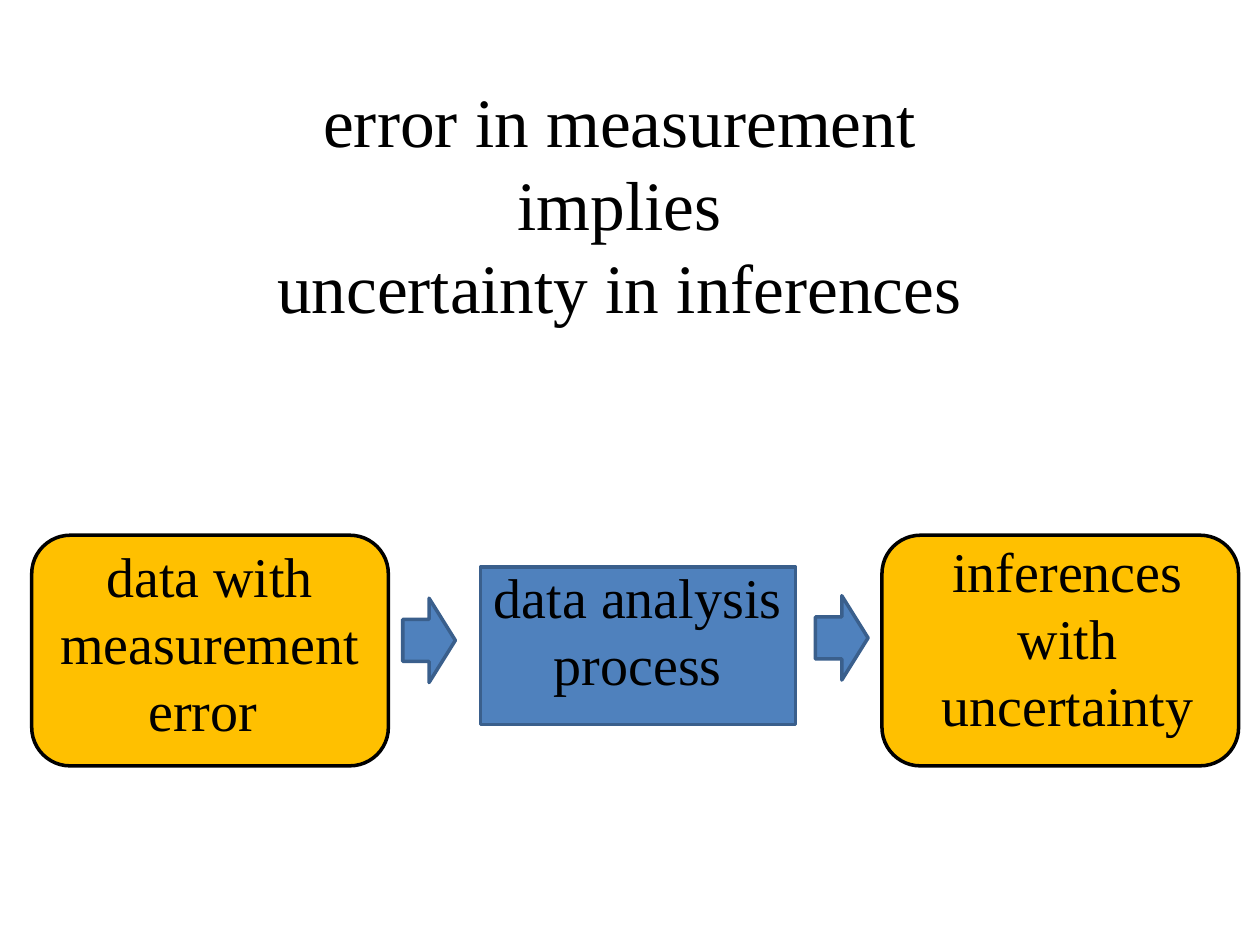
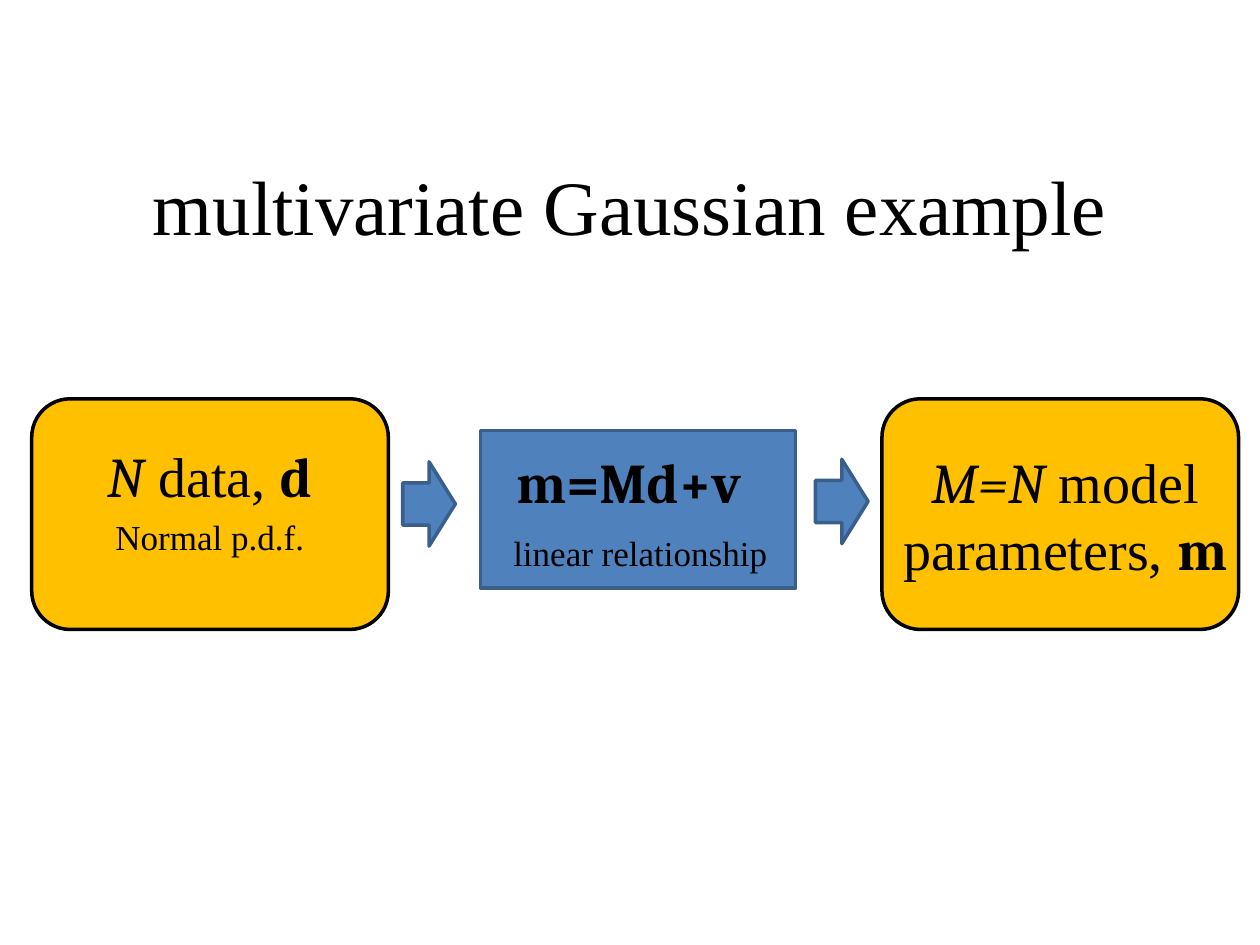
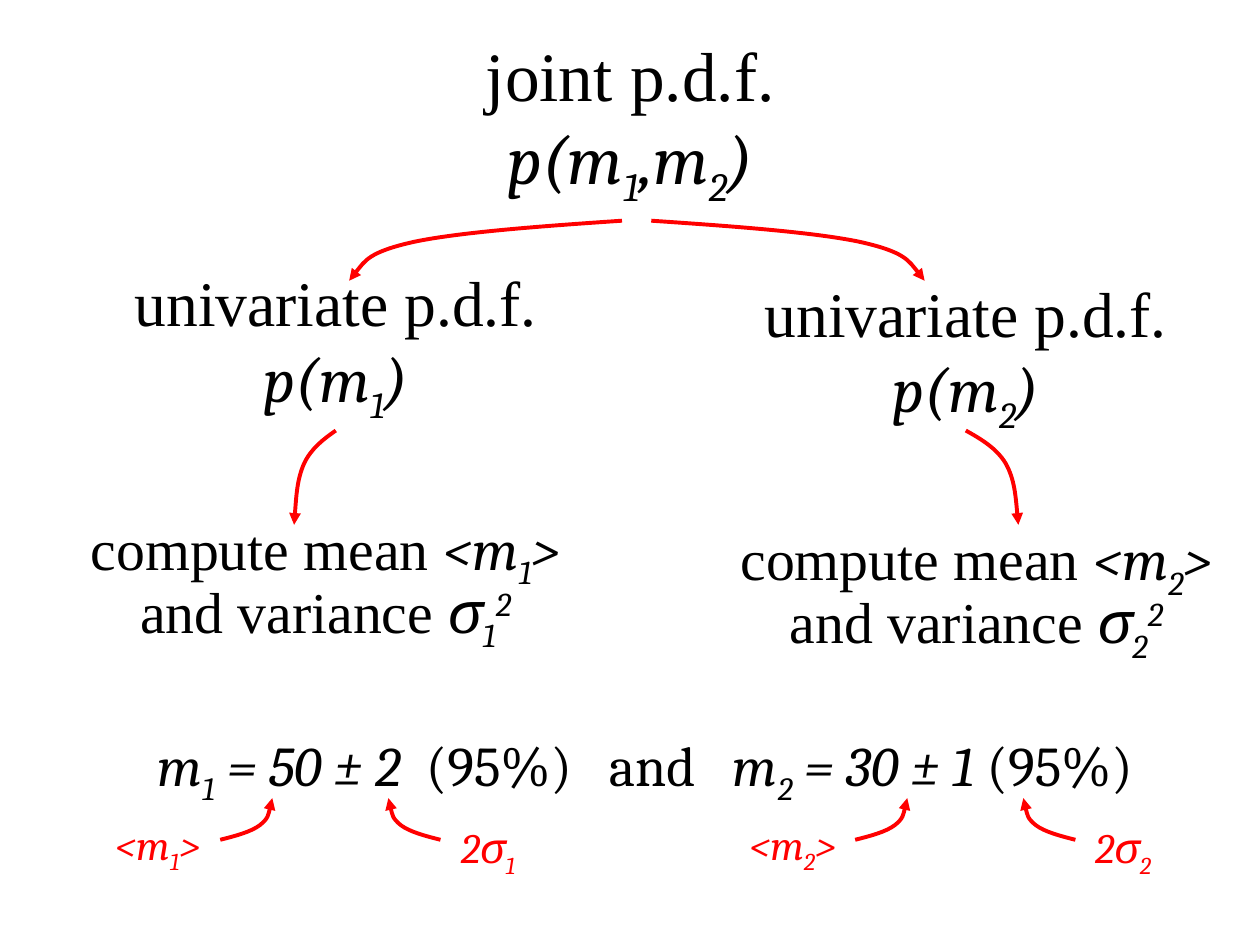
from dataclasses import dataclass

from lxml.etree import SubElement
from pptx import Presentation
from pptx.dml.color import RGBColor
from pptx.enum.shapes import MSO_SHAPE as Preset
from pptx.enum.text import MSO_ANCHOR as Anchor, PP_ALIGN as Align
from pptx.oxml.ns import qn
from pptx.util import Cm, Pt

BLACK, RED = "000000", "FF0000"
BLUE, DARK_BLUE, AMBER = "4F81BD", "3A5F8C", "FFC000"
SERIF, MATH = "Times New Roman", "Cambria"

# Piece styles: font, italic, bold, baseline shift in thousandths of a percent
PLAIN = (SERIF, False, False, 0)
ROMAN = (MATH, False, False, 0)
ITALIC = (MATH, True, False, 0)
BOLD = (MATH, False, True, 0)
SUB = (MATH, True, False, -25000)
SUPER = (MATH, True, False, 30000)

# Control points after (0, 0) of a two-part Bezier sweep to (1, 1)
SWEEP = [(0.29, 0.09), (0.59, 0.19), (0.76, 0.35),
         (0.93, 0.52), (0.96, 0.77), (1, 1)]
HANGING = 0.95


@dataclass
class Para:
    pieces: list
    size: float = 32
    color: str = BLACK
    align: Align = Align.CENTER
    spacing: float = None
    before: float = 0
    margin: float = None


def rgb(code):
    return RGBColor.from_string(code)


def body(*pieces, size=32, align=Align.CENTER, margin=0):
    """Body paragraph with a fifth of its size as space before it."""
    return Para(list(pieces), size, align=align, before=0.2 * size, margin=margin)


def add_text(slide, box, *paras, anchor=Anchor.TOP):
    frame = slide.shapes.add_textbox(*map(Cm, box)).text_frame
    frame.word_wrap = True
    frame.vertical_anchor = anchor
    for number, para in enumerate(paras):
        line = frame.add_paragraph() if number else frame.paragraphs[0]
        line.alignment = para.align
        if para.before:
            line.space_before = Pt(para.before)
        if para.spacing:
            line.line_spacing = para.spacing
        if para.margin is not None:
            properties = line._p.get_or_add_pPr()
            properties.set("marL", str(Cm(para.margin)))
            properties.set("indent", str(-Cm(HANGING)))
        for text, style in para.pieces:
            if text == "\n":
                line.add_line_break()
                continue
            run = line.add_run()
            run.text = text
            font = run.font
            font.name, font.italic, font.bold, shift = style
            font.size = Pt(para.size)
            font.color.rgb = rgb(para.color)
            if shift:
                run._r.get_or_add_rPr().set("baseline", str(shift))


def add_title(slide, box, *pieces, size=39.6):
    add_text(slide, box, Para(list(pieces), size), anchor=Anchor.MIDDLE)


def add_block(slide, preset, box, fill, outline):
    block = slide.shapes.add_shape(preset, *map(Cm, box))
    block.shadow.inherit = False
    block.fill.solid()
    block.fill.fore_color.rgb = rgb(fill)
    block.line.color.rgb = rgb(outline)
    block.line.width = Pt(2)


def bend(arrow):
    """Turn each three straight steps of the outline into one Bezier curve."""
    outline = next(arrow._element.iter(qn("a:path")))
    steps = outline.findall(qn("a:lnTo"))
    for first in range(0, len(steps), 3):
        curve = SubElement(outline, qn("a:cubicBezTo"))
        for step in steps[first:first + 3]:
            curve.append(step[0])
            outline.remove(step)


def add_sweep(slide, start, end):
    """Curved red arrow that leaves sideways and arrives upright."""
    (x0, y0), (x1, y1) = start, end
    builder = slide.shapes.build_freeform(Cm(x0), Cm(y0), scale=1.0)
    builder.add_line_segments([(Cm(x0 + x * (x1 - x0)), Cm(y0 + y * (y1 - y0)))
                               for x, y in SWEEP], close=False)
    arrow = builder.convert_to_shape()
    bend(arrow)
    arrow.shadow.inherit = False
    arrow.fill.background()
    arrow.line.color.rgb = rgb(RED)
    arrow.line.width = Pt(2.25)
    SubElement(arrow.line._get_or_add_ln(), qn("a:tailEnd"), type="triangle")


def add_flow(slide, top, labels):
    """Data, process and inference blocks; labels hold a box below top and paragraphs."""
    add_block(slide, Preset.RECTANGLE, (9.69, top + 0.64, 6.35, 3.18), BLUE, DARK_BLUE)
    for left in (17.78, 0.64):
        add_block(slide, Preset.ROUNDED_RECTANGLE, (left, top, 7.19, 4.65), AMBER, BLACK)
    for left, drop in ((8.12, 1.27), (16.44, 1.22)):
        add_block(slide, Preset.RIGHT_ARROW, (left, top + drop, 1.06, 1.7), BLUE, DARK_BLUE)
    for (left, drop, width, height), *paras in labels:
        add_text(slide, (left, top + drop, width, height), *paras)


def add_branch(slide, index, left, top, shift):
    """Univariate density, with its mean and variance shifted sideways below."""
    width, height = 11.43, 2.74
    add_text(slide, (left, top, width, height),
             Para([("univariate p.d.f.", PLAIN)], 36.3, spacing=0.8),
             Para([("p(m", ITALIC), (index, SUB), (")", ITALIC)], 36.3),
             anchor=Anchor.MIDDLE)
    moments = [("compute mean ", PLAIN), ("<m", ITALIC), (index, SUB), ("> ", ITALIC),
               ("and variance ", PLAIN), ("σ", ITALIC), (index, SUB), ("2", SUPER)]
    add_text(slide, (left + shift, top + 4.66, width, height),
             Para(moments, 33, spacing=0.8), anchor=Anchor.MIDDLE)


def add_estimate_labels(slide, index, left, top):
    """Red labels that explain the estimate and its bounds."""
    mean = [("<m", ITALIC), (index, SUB), (">", ITALIC)]
    bound = [("2σ", ITALIC), (index, SUB)]
    for dx, dy, pieces, tail, tip in ((0, 0, mean, 2.85, 3.9),
                                      (6.66, 0.07, bound, 7.29, 6.24)):
        add_sweep(slide, (left + tail, top + 0.28), (left + tip, top - 0.56))
        add_text(slide, (left + dx, top + dy, 3.18, 0.84),
                 Para(pieces, 24, RED), anchor=Anchor.MIDDLE)


def error_slide(slide):
    add_flow(slide, 10.79, [
        ((0.84, 0, 6.78, 4.88), body(("data with measurement error ", PLAIN))),
        ((9.47, 0.42, 6.78, 4.88), body(("data analysis process", PLAIN))),
        ((18.13, -0.1, 6.78, 4.88), body(("inferences with uncertainty", PLAIN))),
    ])
    add_title(slide, (1.06, 1.4, 22.86, 5.38),
              ("error in measurement", PLAIN), ("\n", PLAIN),
              ("implies", PLAIN), ("\n", PLAIN),
              ("uncertainty in inferences", PLAIN))


def gaussian_slide(slide):
    add_title(slide, (1.27, 2.54, 22.86, 3.18),
              ("multivariate Gaussian example", PLAIN), size=44)
    add_flow(slide, 8.04, [
        ((0.84, 0.74, 6.78, 2.95),
         body(("N", ITALIC), (" data, ", PLAIN), ("d", BOLD)),
         body(("Normal p.d.f.", PLAIN), size=20)),
        ((10.16, 0.85, 6.6, 1.7), body(("m=Md+v", BOLD), align=Align.LEFT)),
        ((9.52, 2.55, 6.78, 1.07), body(("linear relationship", PLAIN), size=20)),
        ((17.77, 0.85, 7.41, 2.95),
         body(("M=N", ITALIC), (" model parameters, ", PLAIN), ("m", BOLD))),
    ])


def joint_slide(slide):
    add_title(slide, (6.99, 1.07, 11.43, 2.74),
              ("joint p.d.f.", PLAIN), ("\n", PLAIN),
              ("p(m", ITALIC), ("1", SUB), (",m", ITALIC), ("2", SUB), (")", ITALIC))
    # Estimates with their confidence
    add_text(slide, (1.7, 14.6, 22.86, 1.9),
             body(("m", ITALIC), ("1", SUB), (" = 50 ± 2", ITALIC),
                  ("  (95%)   and   ", ROMAN),
                  ("m", ITALIC), ("2", SUB), (" = 30 ± 1", ITALIC), (" (95%) ", ROMAN),
                  margin=HANGING))
    # Branches of the joint density
    add_branch(slide, "1", 1.06, 5.72, -0.21)
    add_branch(slide, "2", 13.76, 5.93, 0.21)
    for start, end in (((12.54, 4.45), (7.04, 5.66)), ((13.13, 4.45), (18.64, 5.66)),
                       ((6.77, 8.68), (5.93, 10.58)), ((19.47, 8.68), (20.53, 10.58))):
        add_sweep(slide, start, end)
    # Explanations under each estimate
    for index, left in (("1", 1.59), ("2", 14.39)):
        add_estimate_labels(slide, index, left, 16.65)


def main():
    deck = Presentation()
    deck.slide_width, deck.slide_height = Cm(25.4), Cm(19.05)
    blank = deck.slide_layouts[6]
    for build in (error_slide, gaussian_slide, joint_slide):
        build(deck.slides.add_slide(blank))
    deck.save("out.pptx")


if __name__ == "__main__":
    main()
